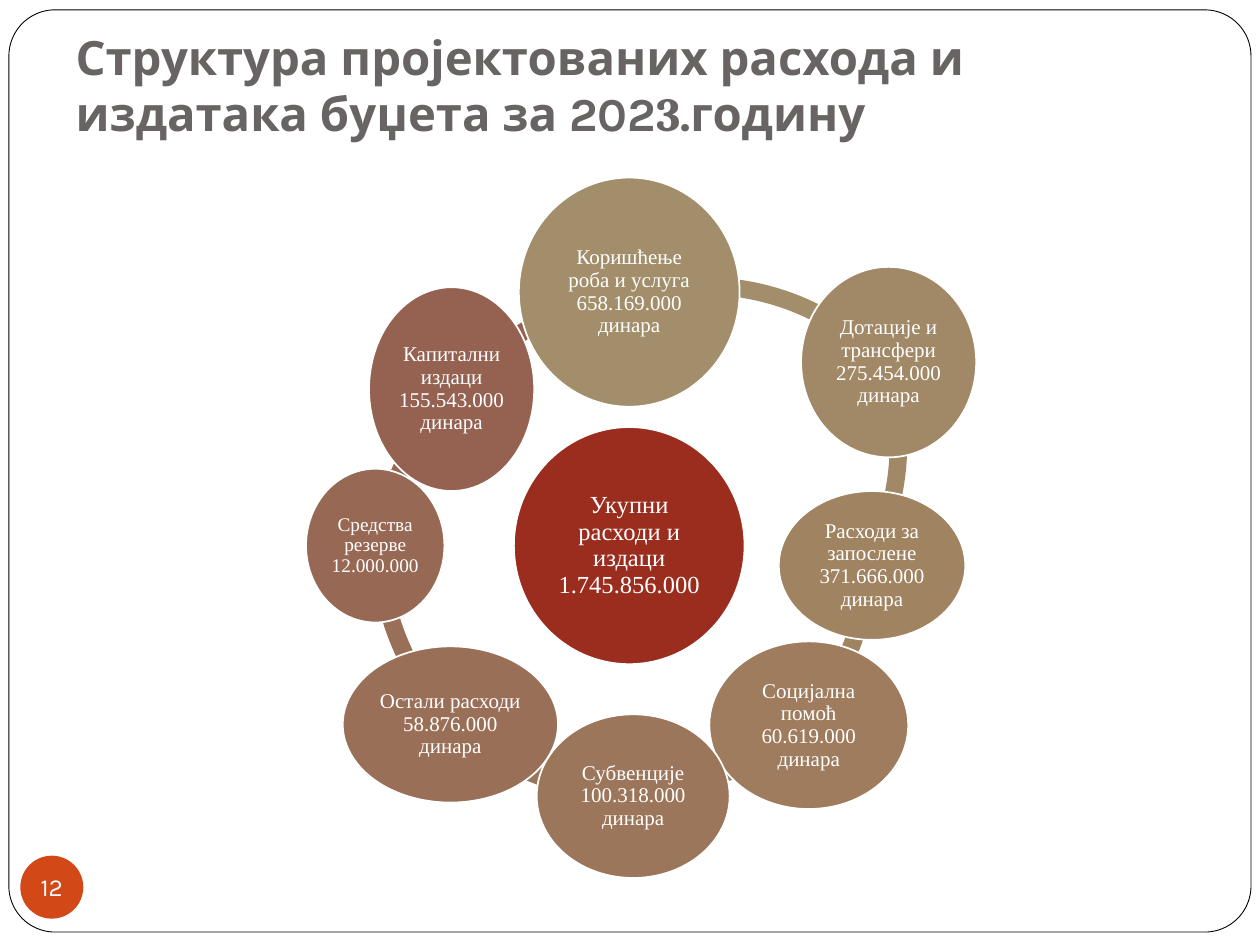
from dataclasses import dataclass

from pptx import Presentation
from pptx.dml.color import RGBColor
from pptx.enum.shapes import MSO_SHAPE
from pptx.enum.text import MSO_ANCHOR, MSO_AUTO_SIZE, PP_ALIGN
from pptx.util import Cm, Pt


@dataclass(frozen=True)
class Theme:
    white: str = "FFFFFF"
    border: str = "000000"
    heading: str = "696464"
    badge: str = "D34817"
    total: str = "9B2D1F"
    heading_font: str = "Karla"
    digit_font: str = "Cambria"
    body_font: str = "Times New Roman"
    heading_size: int = 27
    total_size: int = 14
    category_size: int = 12
    small_size: int = 11
    badge_size: int = 14


@dataclass(frozen=True)
class Category:
    label: str
    color: str
    circle: tuple  # left, top, width, height in cm within the diagram
    arc: tuple  # left, top in cm within the diagram, start and end in degrees
    size: int = Theme.category_size


THEME = Theme()
ARC_DIAMETER = 10.39
ARC_THICKNESS = 0.034
DEGREE = 0.6  # one degree in units of a shape adjustment

TITLE_RUNS = [
    ("Структура пројектованих расхода и издатака буџета за 202", THEME.heading_font),
    ("3", THEME.digit_font),
    (".годину", THEME.heading_font),
]

TOTAL_LABEL = "Укупни расходи и издаци 1.745.856.000"
TOTAL_CIRCLE = (4.19, 5.03, 4.65, 4.78)

# Clockwise from the top
CATEGORIES = [
    Category("Коришћење роба и услуга 658.169.000 динара", "A28E6A",
             (4.29, 0, 4.45, 4.62), (2.82, 2.01, 252.97, 317.24)),
    Category("Дотације и трансфери 275.454.000 динара", "A18866",
             (9.98, 1.8, 3.53, 3.84), (1.73, 0.18, 341.21, 28.59)),
    Category("Расходи за запослене 371.666.000 динара", "A08361",
             (9.53, 6.32, 3.76, 3), (1.12, 2.44, 1.97, 41.58)),
    Category("Социјална помоћ 60.619.000 динара", "9E7C5D",
             (8.13, 9.35, 4.01, 3.38), (1.37, 2.16, 45.93, 89.8)),
    Category("Субвенције 100.318.000 динара", "9C765A",
             (4.65, 10.82, 3.89, 3.3), (1.24, 2.16, 88.5, 134.1)),
    Category("Остали расходи 58.876.000 динара", "9A6F57",
             (0.74, 9.45, 4.34, 3.15), (1.32, 2.24, 135, 180)),
    Category("Средства резерве 12.000.000", "976954",
             (0, 5.87, 2.79, 3.1), (1.3, 2.74, 185.81, 225.94), THEME.small_size),
    Category("Капитални издаци 155.543.000 динара", "956251",
             (1.27, 2.21, 3.33, 4.11), (1.78, 2.21, 217.83, 264.88)),
]


def format_font(run, font, size, color, bold=False):
    run.font.name = font
    run.font.size = Pt(size)
    run.font.bold = bold
    run.font.color.rgb = RGBColor.from_string(color)


def add_filled(slide, preset, box, fill, line=None, line_width=1):
    shape = slide.shapes.add_shape(preset, *(Cm(length) for length in box))
    shape.shadow.inherit = False
    shape.fill.solid()
    shape.fill.fore_color.rgb = RGBColor.from_string(fill)
    if line:
        shape.line.color.rgb = RGBColor.from_string(line)
        shape.line.width = Pt(line_width)
    else:
        shape.line.fill.background()
    return shape


def write_centred(shape, text, font, size, inset=0.0, wrap=True):
    frame = shape.text_frame
    frame.text = text
    frame.word_wrap = wrap
    frame.vertical_anchor = MSO_ANCHOR.MIDDLE
    frame.margin_left = frame.margin_right = Cm(inset)
    frame.margin_top = frame.margin_bottom = Cm(inset)
    paragraph = frame.paragraphs[0]
    paragraph.alignment = PP_ALIGN.CENTER
    format_font(paragraph.runs[0], font, size, THEME.white)
    return paragraph


def add_frame(slide, box):
    border = add_filled(slide, MSO_SHAPE.ROUNDED_RECTANGLE, box,
                        THEME.white, THEME.border, 0.5)
    border.adjustments[0] = 0.05
    # Keep the frame behind the title
    slide.shapes.title.element.addprevious(border.element)


def place_title(slide, box):
    title = slide.shapes.title
    title.left, title.top, title.width, title.height = (Cm(length) for length in box)
    frame = title.text_frame
    frame.word_wrap = True
    frame.auto_size = MSO_AUTO_SIZE.NONE
    frame.vertical_anchor = MSO_ANCHOR.BOTTOM
    frame.margin_bottom = Cm(0.25)
    paragraph = frame.paragraphs[0]
    paragraph.alignment = PP_ALIGN.LEFT
    for text, font in TITLE_RUNS:
        run = paragraph.add_run()
        run.text = text
        format_font(run, font, THEME.heading_size, THEME.heading, bold=True)


def add_page_badge(slide, box, number):
    badge = add_filled(slide, MSO_SHAPE.OVAL, box, THEME.badge)
    write_centred(badge, number, THEME.heading_font, THEME.badge_size, wrap=False)


def add_expense_cycle(slide, left, top):
    def add_circle(box, label, color, size):
        x, y, width, height = box
        circle = add_filled(slide, MSO_SHAPE.OVAL, (left + x, top + y, width, height),
                            color, THEME.white)
        paragraph = write_centred(circle, label, THEME.body_font, size, inset=0.05)
        paragraph.line_spacing = 0.9

    # Ring segments lie behind every circle
    for category in reversed(CATEGORIES):
        x, y, start, end = category.arc
        segment = add_filled(slide, MSO_SHAPE.BLOCK_ARC,
                             (left + x, top + y, ARC_DIAMETER, ARC_DIAMETER),
                             category.color)
        for index, value in enumerate((start * DEGREE, end * DEGREE, ARC_THICKNESS)):
            segment.adjustments[index] = value

    # Total in the middle, categories around it
    add_circle(TOTAL_CIRCLE, TOTAL_LABEL, THEME.total, THEME.total_size)
    for category in CATEGORIES:
        add_circle(category.circle, category.label, category.color, category.size)


def main():
    presentation = Presentation()
    presentation.slide_width, presentation.slide_height = Cm(25.4), Cm(19.05)
    slide = presentation.slides.add_slide(presentation.slide_layouts[5])
    add_frame(slide, (0.18, 0.2, 25.04, 18.59))
    place_title(slide, (1.27, 0.74, 22.86, 2.36))
    add_page_badge(slide, (0.41, 17.25, 1.27, 1.27), "12")
    add_expense_cycle(slide, 6.17, 3.58)
    presentation.save("out.pptx")


if __name__ == "__main__":
    main()
